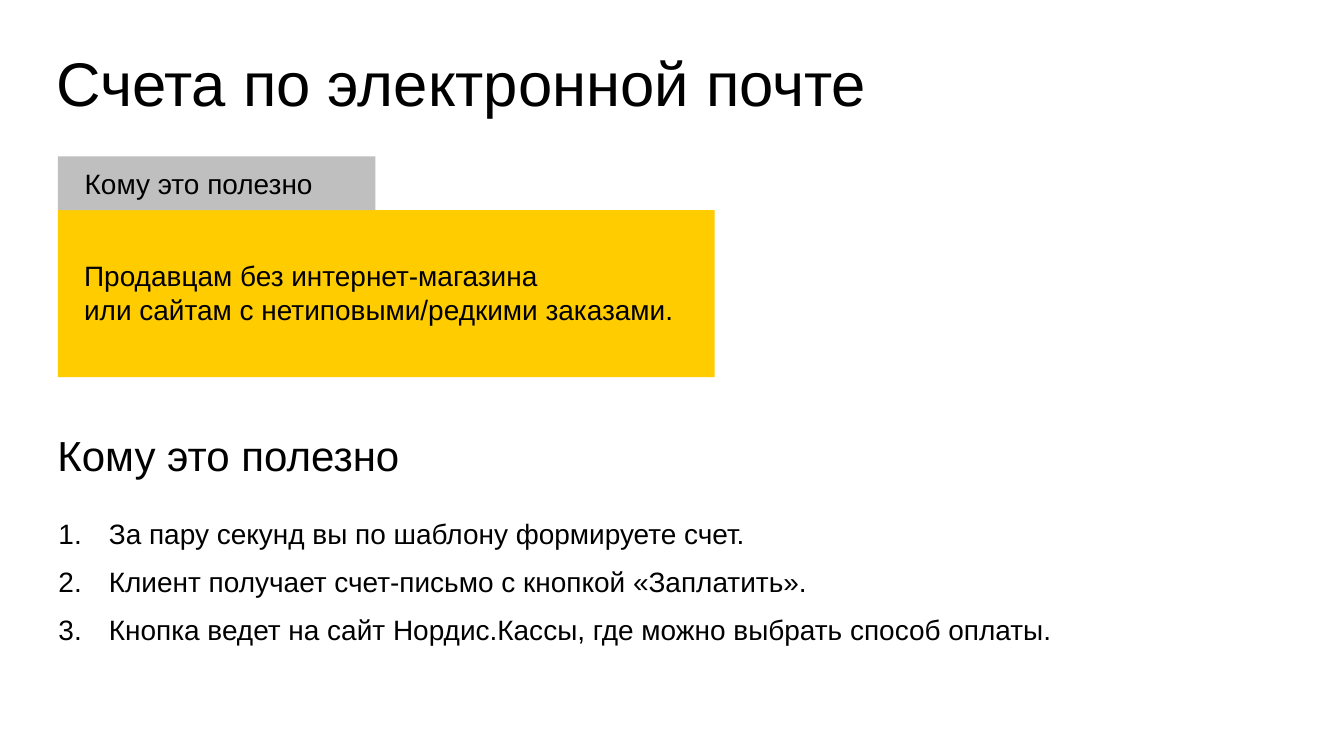
from dataclasses import dataclass
from typing import Optional

from lxml.etree import SubElement
from pptx import Presentation
from pptx.dml.color import RGBColor
from pptx.enum.shapes import MSO_SHAPE
from pptx.enum.text import MSO_ANCHOR, MSO_AUTO_SIZE
from pptx.oxml.ns import qn
from pptx.util import Emu, Inches, Length, Pt

FONT = "Arial"
BLACK, GRAY, YELLOW = "000000", "BFBFBF", "FFCC00"


@dataclass
class Box:
    """Place on the slide, in percent of its width and height."""
    left: float
    top: float
    width: float
    height: float


@dataclass
class Panel:
    box: Box
    color: str


@dataclass
class TextBlock:
    box: Box
    lines: list[str]
    size: int = 40
    middle: bool = False
    grow: bool = False
    line_spacing: Optional[float | Length] = None
    gap: int = 0
    numbered: bool = False
    inset: float = 0.1


PANELS = [
    Panel(Box(4.31, 27.8, 48.87, 22.07), YELLOW),
    Panel(Box(4.31, 20.67, 23.63, 7.13), GRAY),
]

TEXTS = [
    # Title
    TextBlock(Box(4.2, 5.6, 95.8, 11.07), ["Счета по электронной почте"],
              size=88, middle=True, line_spacing=Pt(100), inset=0),
    # Tab and panel captions
    TextBlock(Box(5.93, 21.27, 19.58, 5.6), ["Кому это полезно"],
              grow=True, line_spacing=1.1),
    TextBlock(Box(5.89, 28.13, 45.27, 21),
              ["Продавцам без интернет-магазина \vили сайтам с нетиповыми/редкими заказами."],
              middle=True, gap=40),
    # Subheading and steps
    TextBlock(Box(3.9, 55.8, 47.26, 8.07), ["Кому это полезно"],
              size=60, grow=True, line_spacing=1.1),
    TextBlock(Box(3.98, 64.07, 81.92, 25.67),
              ["За пару секунд вы по шаблону формируете счет.",
               "Клиент получает счет-письмо с кнопкой «Заплатить».",
               "Кнопка ведет на сайт Нордис.Кассы, где можно выбрать способ оплаты."],
              middle=True, gap=10, numbered=True),
]


def rgb(color: str) -> RGBColor:
    return RGBColor.from_string(color)


def place(prs, box: Box) -> tuple[Emu, Emu, Emu, Emu]:
    w, h = prs.slide_width / 100, prs.slide_height / 100
    return (Emu(round(box.left * w)), Emu(round(box.top * h)),
            Emu(round(box.width * w)), Emu(round(box.height * h)))


def draw_panel(prs, s, panel: Panel) -> None:
    sp = s.shapes.add_shape(MSO_SHAPE.RECTANGLE, *place(prs, panel.box))
    sp.shadow.inherit = False
    sp.fill.solid()
    sp.fill.fore_color.rgb = rgb(panel.color)
    sp.line.fill.background()


def number(p) -> None:
    """Turn a paragraph into a numbered item with a hanging indent."""
    pPr = p._p.get_or_add_pPr()
    pPr.set("marL", str(Inches(1)))
    pPr.set("indent", str(-Inches(1)))
    SubElement(pPr, qn("a:buFont")).set("typeface", FONT)
    SubElement(pPr, qn("a:buAutoNum")).set("type", "arabicPeriod")


def draw_text(prs, s, block: TextBlock) -> None:
    tf = s.shapes.add_textbox(*place(prs, block.box)).text_frame
    tf.word_wrap = True
    tf.margin_left = Inches(block.inset)
    tf.vertical_anchor = MSO_ANCHOR.MIDDLE if block.middle else MSO_ANCHOR.TOP
    tf.auto_size = MSO_AUTO_SIZE.SHAPE_TO_FIT_TEXT if block.grow else MSO_AUTO_SIZE.NONE
    tf.text = "\n".join(block.lines)
    for p in tf.paragraphs:
        p.line_spacing = block.line_spacing
        p.space_before = p.space_after = Pt(block.gap)
        if block.numbered:
            number(p)
        for r in p.runs:
            r.font.name = FONT
            r.font.size = Pt(block.size)
            r.font.color.rgb = rgb(BLACK)


def main() -> None:
    prs = Presentation()
    prs.slide_width, prs.slide_height = Inches(26.66), Inches(15)
    s = prs.slides.add_slide(prs.slide_layouts[6])
    for panel in PANELS:
        draw_panel(prs, s, panel)
    for block in TEXTS:
        draw_text(prs, s, block)
    prs.save("out.pptx")


if __name__ == "__main__":
    main()
